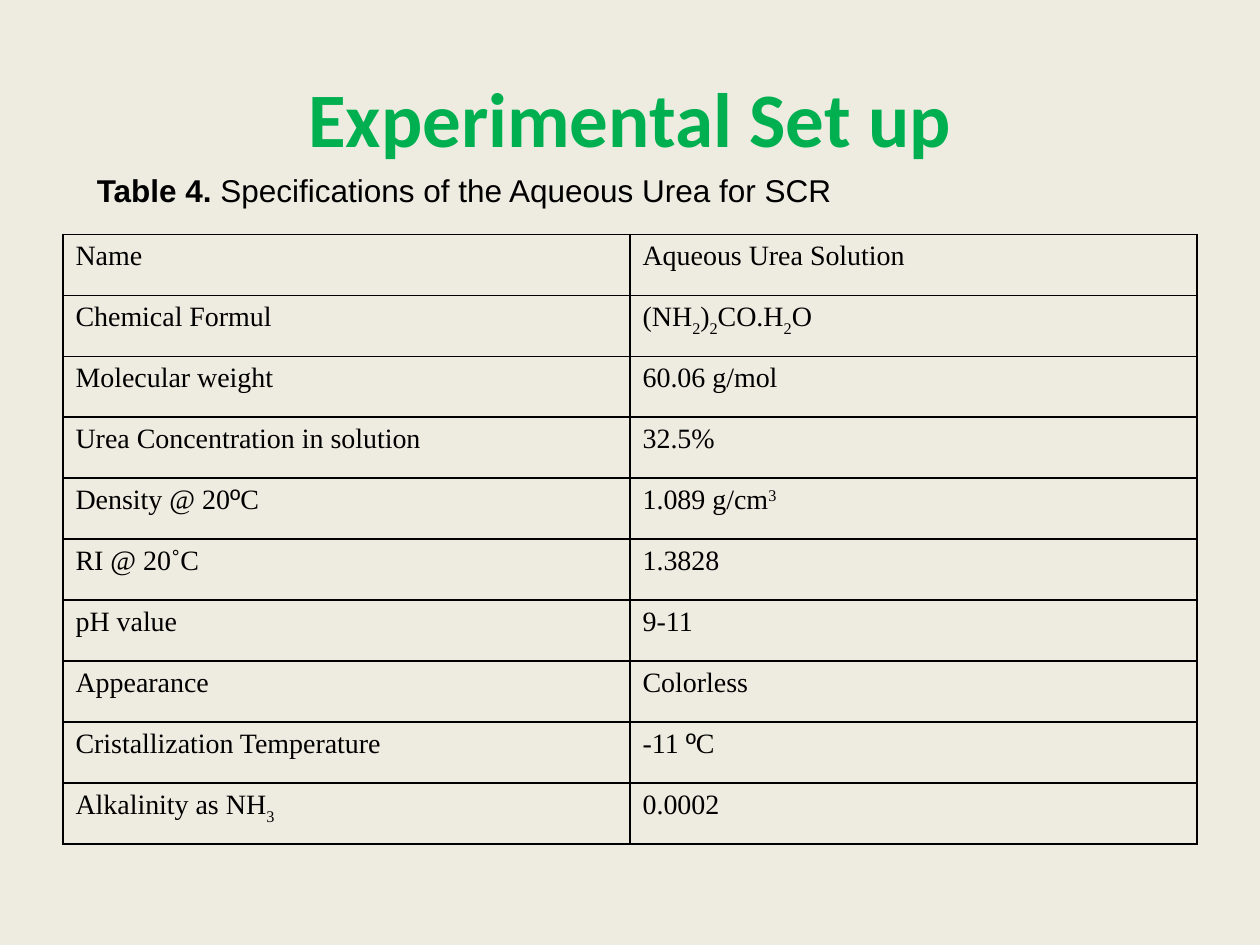
import pptx
import pptx.util
import pptx.dml.color
import pptx.enum.text
import pptx.oxml.ns
from lxml import etree

Inches, Pt = pptx.util.Inches, pptx.util.Pt
ALIGN = pptx.enum.text.PP_ALIGN
ANCHOR = pptx.enum.text.MSO_ANCHOR

# Content: a text is a list of (words, style) spans
TITLE = [("Experimental Set up", "title")]
CAPTION = [("Table 4.", "label"),
           (" Specifications of the Aqueous Urea for SCR", "caption")]
ROWS = [
    ("Name", "Aqueous Urea Solution"),
    ("Chemical Formul", [("(NH", "cell"), ("2", "sub"), (")", "cell"), ("2", "sub"),
                         ("CO.H", "cell"), ("2", "sub"), ("O", "cell")]),
    ("Molecular weight", "60.06 g/mol"),
    ("Urea Concentration in solution", "32.5%"),
    ([("Density @ 20", "cell"), ("º", "degree"), ("C", "cell")],
     [("1.089 g/cm", "cell"), ("3", "super")]),
    ("RI @ 20˚C", "1.3828"),
    ("pH value", "9-11"),
    ("Appearance", "Colorless"),
    ("Cristallization Temperature", [("-11 ", "cell"), ("º", "degree"), ("C", "cell")]),
    ([("Alkalinity as NH", "cell"), ("3", "sub")], "0.0002"),
]

# Formats
BACKGROUND, GREEN, BLACK = "EEECE1", "00B050", "000000"
CELL = {"name": "Times New Roman", "size": Pt(16), "bold": False}
STYLES = {
    "title": {"name": "Calibri", "size": Pt(44), "bold": True},
    "label": {"name": "Arial", "size": Pt(18), "bold": True},
    "caption": {"name": "Arial", "size": Pt(18), "bold": False},
    "cell": CELL, "sub": CELL, "super": CELL,
    "degree": {**CELL, "name": "Arial"},
}
BASELINES = {"sub": "-30000", "super": "30000"}

# Layout
WIDTH, HEIGHT = 10, 7.5
MARGIN = 0.05 * WIDTH
TABLE_TOP, TABLE_HEIGHT = 1.86, 4.84
HANGING = 0.38


def color(hex_string):
    return pptx.dml.color.RGBColor.from_string(hex_string)


def write(para, spans, hex_string=BLACK):
    for words, style in spans:
        span = para.add_run()
        span.text = words
        for key, value in STYLES[style].items():
            setattr(span.font, key, value)
        span.font.color.rgb = color(hex_string)
        if style in BASELINES:
            span.font._element.set("baseline", BASELINES[style])


def add_text(page, place, spans, hex_string, align, anchor):
    box = page.shapes.add_textbox(*map(Inches, place))
    frame = box.text_frame
    frame.word_wrap = True
    frame.vertical_anchor = anchor
    frame.paragraphs[0].alignment = align
    write(frame.paragraphs[0], spans, hex_string)


def add_borders(cell):
    properties = cell._tc.get_or_add_tcPr()
    for index, side in enumerate(("lnL", "lnR", "lnT", "lnB")):
        line = etree.Element(pptx.oxml.ns.qn("a:" + side), w=str(Pt(1)))
        fill = etree.SubElement(line, pptx.oxml.ns.qn("a:solidFill"))
        etree.SubElement(fill, pptx.oxml.ns.qn("a:srgbClr"), val=BLACK)
        properties.insert(index, line)


def fill_cell(cell, content):
    cell.fill.background()
    add_borders(cell)
    para = cell.text_frame.paragraphs[0]
    para.alignment = ALIGN.JUSTIFY
    indent = para._p.get_or_add_pPr()
    indent.set("marL", str(Inches(HANGING)))
    indent.set("indent", str(-Inches(HANGING)))
    write(para, [(content, "cell")] if isinstance(content, str) else content)


def main():
    deck = pptx.Presentation()
    deck.slide_width, deck.slide_height = Inches(WIDTH), Inches(HEIGHT)
    page = deck.slides.add_slide(deck.slide_layouts[6])
    page.background.fill.solid()
    page.background.fill.fore_color.rgb = color(BACKGROUND)

    # Title and caption
    full_width = WIDTH - 2 * MARGIN
    add_text(page, (MARGIN, 0.3, full_width, 1.25), TITLE, GREEN,
             ALIGN.CENTER, ANCHOR.MIDDLE)
    add_text(page, (0.67, 1.31, 7.9, 0.4), CAPTION, BLACK, ALIGN.LEFT, ANCHOR.TOP)

    # Specification table, with equal rows and columns
    place = map(Inches, (MARGIN, TABLE_TOP, full_width, TABLE_HEIGHT))
    table = page.shapes.add_table(len(ROWS), len(ROWS[0]), *place).table
    table.first_row = table.horz_banding = False
    for row, contents in enumerate(ROWS):
        for column, content in enumerate(contents):
            fill_cell(table.cell(row, column), content)

    deck.save("out.pptx")


if __name__ == "__main__":
    main()
